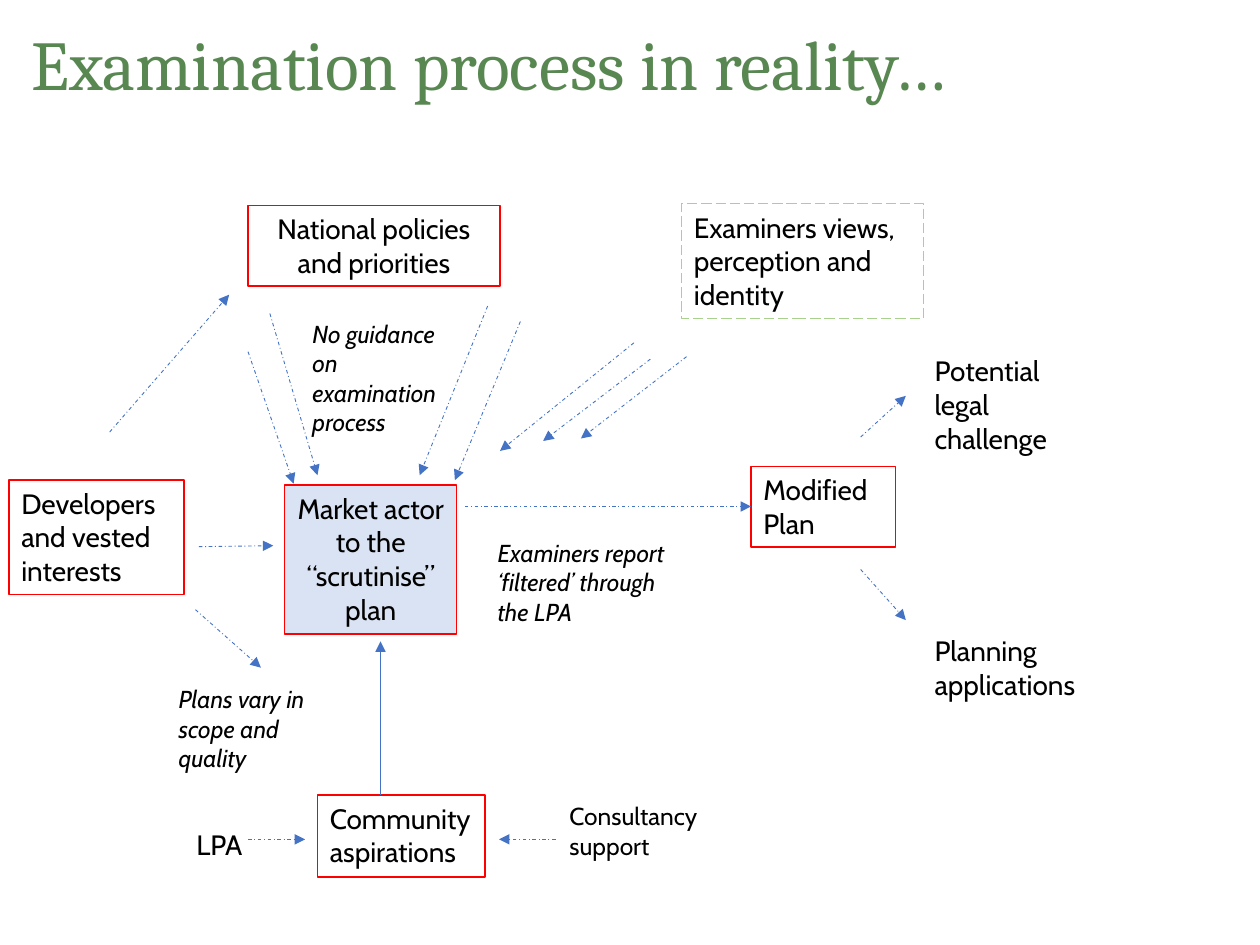
import pptx
import pptx.dml.color
import pptx.enum.dml
import pptx.enum.shapes
import pptx.enum.text
import pptx.util
from lxml import etree
from pptx.util import Cm

RGBColor = pptx.dml.color.RGBColor
BLACK = RGBColor(0x00, 0x00, 0x00)
RED = RGBColor(0xFF, 0x00, 0x00)
BLUE = RGBColor(0x44, 0x72, 0xC4)
PALE_BLUE = RGBColor(0xDA, 0xE3, 0xF3)
PALE_GREEN = RGBColor(0xA9, 0xD1, 0x8E)
TITLE_GREEN = RGBColor(0x59, 0x87, 0x52)

DASH = pptx.enum.dml.MSO_LINE
ALIGN = pptx.enum.text.PP_ALIGN
FIT = pptx.enum.text.MSO_AUTO_SIZE
A = "http://schemas.openxmlformats.org/drawingml/2006/main"

prs = pptx.Presentation()
prs.slide_width, prs.slide_height = Cm(25.4), Cm(19.05)
s = prs.slides.add_slide(prs.slide_layouts[6])


def add_text(text, x, y, w, h, size=16, font="Cabin", color=BLACK, italic=False,
             align=ALIGN.LEFT, line=None, dash=None, fill=None, fit=True):
    """Add a text box, or a rectangle when a line colour is given."""
    at = Cm(x), Cm(y), Cm(w), Cm(h)
    if line is None:
        sp = s.shapes.add_textbox(*at)
    else:
        sp = s.shapes.add_shape(pptx.enum.shapes.MSO_SHAPE.RECTANGLE, *at)
        sp.shadow.inherit = False
        sp.line.color.rgb = line
        sp.line.width = pptx.util.Pt(0.75)
        if dash is not None:
            sp.line.dash_style = dash
        if fill is None:
            sp.fill.background()
        else:
            sp.fill.solid()
            sp.fill.fore_color.rgb = fill
    tf = sp.text_frame
    tf.word_wrap = True
    tf.auto_size = FIT.SHAPE_TO_FIT_TEXT if fit else FIT.NONE
    tf.vertical_anchor = pptx.enum.text.MSO_ANCHOR.TOP
    p = tf.paragraphs[0]
    p.alignment = align
    r = p.add_run()
    r.text = text
    r.font.name = font
    r.font.size = pptx.util.Pt(size)
    r.font.italic = italic
    r.font.color.rgb = color
    return sp


# Title
tf = add_text("Examination process in reality…", 0.64, 0.99, 23.06, 1.83, size=40,
              font="Cambria", color=TITLE_GREEN, fit=False).text_frame
tf.margin_left = tf.margin_right = tf.margin_top = tf.margin_bottom = 0
tf.paragraphs[0].line_spacing = pptx.util.Pt(31.5)

# Framed actors and stages
add_text("National policies and priorities", 5, 4.14, 5.08, 1.63,
         align=ALIGN.CENTER, line=RED)
add_text("Developers and vested interests", 0.18, 9.68, 3.53, 2.31, line=RED)
add_text("Market actor to the “scrutinise” plan", 5.74, 9.78, 3.47, 3,
         align=ALIGN.CENTER, line=RED, fill=PALE_BLUE)
add_text("Modified Plan", 15.14, 9.4, 2.92, 1.63, line=RED)
add_text("Community aspirations", 6.4, 16.03, 3.38, 1.65, line=RED)
add_text("Examiners views, perception and identity", 13.74, 4.11, 4.88, 2.31,
         line=PALE_GREEN, dash=DASH.LONG_DASH)

# Comments in italics
for text, x, y, w, h in [
    ("No guidance on examination process", 6.05, 6.3, 3.25, 2.64),
    ("Examiners report ‘filtered’ through the LPA", 9.78, 10.72, 4.34, 2.06),
    ("Plans vary in scope and quality", 3.35, 13.67, 3.25, 2.06),
]:
    add_text(text, x, y, w, h, size=14, italic=True)

# Unframed labels
add_text("Consultancy support", 11.23, 16.03, 4.11, 1.45, size=14)
add_text("LPA", 3.71, 16.56, 1.73, 0.94)
add_text("Potential legal challenge", 18.59, 7.01, 2.92, 2.31)
add_text("Planning applications", 18.59, 12.65, 3.51, 1.63)

# Arrows: start x, start y, end x, end y, dash
DOTTED = DASH.DASH_DOT
for x1, y1, x2, y2, dash in [
    # national policies to market actor
    (5.44, 6.32, 6.4, 9.58, DOTTED),
    (9.83, 6.17, 8.46, 9.58, DOTTED),
    (10.49, 6.48, 9.17, 9.68, DOTTED),
    (5, 7.09, 5.92, 9.75, DOTTED),
    # from developers
    (2.21, 8.71, 4.62, 5.94, DOTTED),
    (4.01, 11.02, 5.51, 11, DOTTED),
    (3.94, 12.29, 5.26, 13.46, DOTTED),
    # market actor to modified plan, and onwards
    (9.37, 10.21, 15.14, 10.21, DOTTED),
    (17.35, 11.48, 18.26, 12.5, DOTTED),
    (17.35, 8.81, 18.26, 7.98, DOTTED),
    # into and out of community aspirations
    (7.67, 16.03, 7.67, 12.93, DASH.SOLID),
    (5, 16.92, 6.15, 16.92, DOTTED),
    (11.2, 16.92, 10.06, 16.92, DOTTED),
    # from examiners views
    (13.11, 7.24, 10.95, 8.89, DOTTED),
    (13.84, 7.19, 11.71, 8.84, DOTTED),
    (12.78, 6.91, 10.08, 9.09, DOTTED),
]:
    sp = s.shapes.add_connector(pptx.enum.shapes.MSO_CONNECTOR.STRAIGHT,
                                Cm(x1), Cm(y1), Cm(x2), Cm(y2))
    sp.line.color.rgb = BLUE
    sp.line.width = pptx.util.Pt(0.5)
    sp.line.dash_style = dash
    ln = sp.line._get_or_add_ln()
    etree.SubElement(ln, f"{{{A}}}tailEnd", type="triangle")
    etree.SubElement(ln.getparent(), f"{{{A}}}effectLst")

prs.save("out.pptx")
